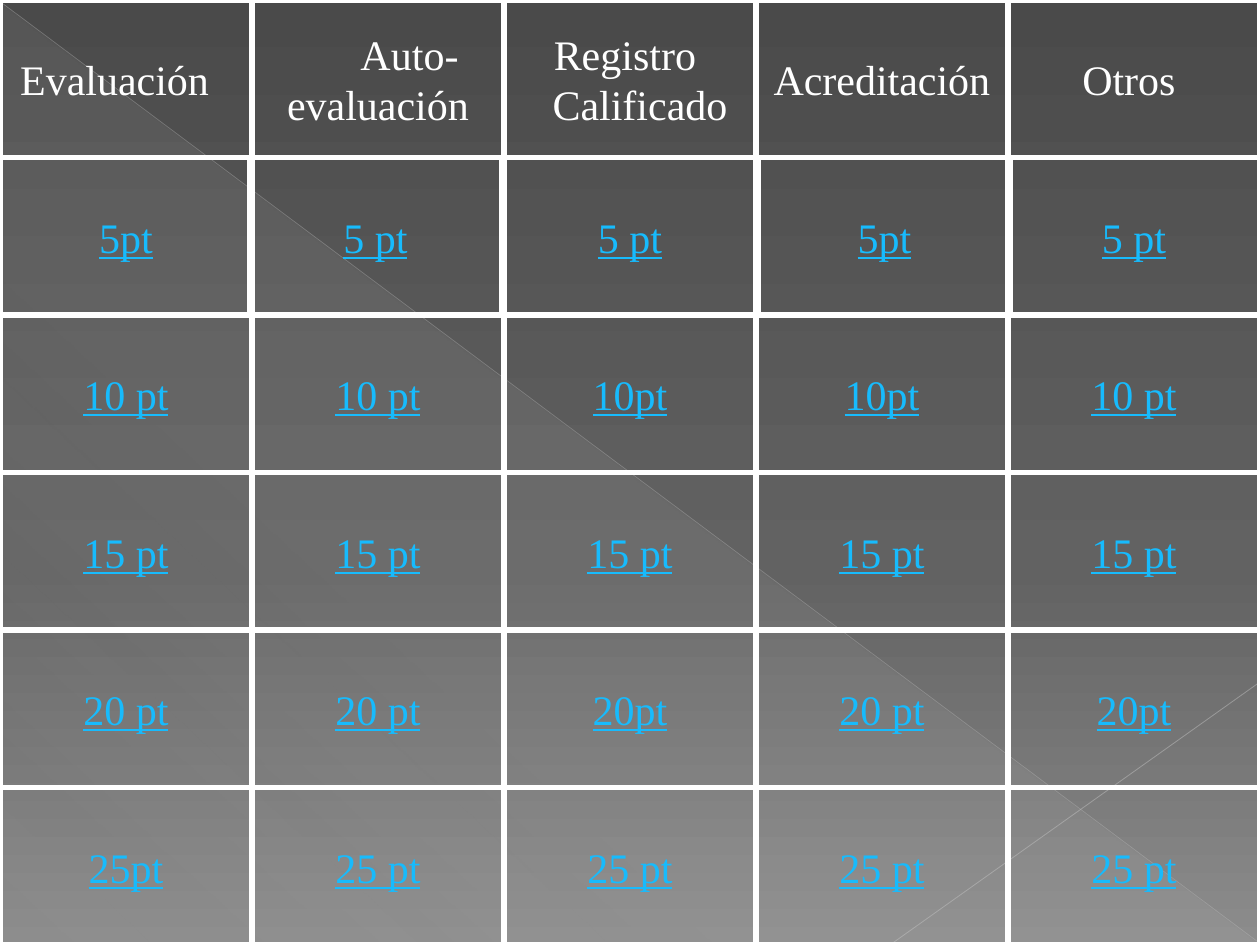
from dataclasses import dataclass

from lxml.etree import SubElement
from pptx import Presentation
from pptx.dml.color import RGBColor
from pptx.enum.shapes import MSO_CONNECTOR, MSO_SHAPE
from pptx.enum.text import MSO_ANCHOR, PP_ALIGN
from pptx.oxml.ns import qn
from pptx.util import Inches, Pt


@dataclass(frozen=True)
class Theme:
    font: str = "Times New Roman"
    size: float = 24
    heading: str = "FFFFFF"
    link: str = "17BBFD"
    border: str = "FFFFFF"
    border_width: float = 3
    backdrop: tuple = ((0, "4A4A4A", 100), (60, "626262", 100), (100, "8C8C8C", 100))
    sheen: tuple = ((0, "D2D2D2", 10), (70, "D2D2D2", 8), (100, "D2D2D2", 1))
    long_ray: tuple = ("BFBFBF", 0.39, 35)
    short_ray: tuple = ("C6C6C6", 0.47, 45)


HEADINGS = [
    [("Evaluación", -0.09)],
    [("Auto-", 0.25), ("evaluación", 0)],
    [("Registro", -0.04), ("Calificado", 0.12)],
    [("Acreditación", 0)],
    [("Otros", -0.04)],
]
POINTS = [
    ["5pt", "5 pt", "5 pt", "5pt", "5 pt"],
    ["10 pt", "10 pt", "10pt", "10pt", "10 pt"],
    ["15 pt", "15 pt", "15 pt", "15 pt", "15 pt"],
    ["20 pt", "20 pt", "20pt", "20 pt", "20pt"],
    ["25pt", "25 pt", "25 pt", "25 pt", "25 pt"],
]
NUDGES = {(1, 1): -0.01, (3, 1): 0.01}


class Board:
    def __init__(self, presentation, theme, columns, rows):
        self.theme = theme
        self.slide = presentation.slides.add_slide(presentation.slide_layouts[6])
        self.column_width = presentation.slide_width / columns
        self.row_height = presentation.slide_height / rows

    def place(self, column, row):
        return round(column * self.column_width), round(row * self.row_height)

    def gradient(self, fill, owner, stops, angle):
        fill.gradient()
        gradient = owner.find(".//" + qn("a:gradFill"))
        for child in list(gradient):
            gradient.remove(child)
        stop_list = SubElement(gradient, qn("a:gsLst"))
        for position, color, opacity in stops:
            stop = SubElement(stop_list, qn("a:gs"), pos=str(position * 1000))
            tint = SubElement(stop, qn("a:srgbClr"), val=color)
            if opacity < 100:
                SubElement(tint, qn("a:alpha"), val=str(opacity * 1000))
        SubElement(gradient, qn("a:lin"), ang=str(angle * 60000), scaled="0")

    def backdrop(self):
        self.gradient(self.slide.background.fill, self.slide.element, self.theme.backdrop, 90)

    def shape(self, kind, column, row, width=1, height=1):
        shape = self.slide.shapes.add_shape(
            kind, *self.place(column, row), *self.place(width, height)
        )
        shape.shadow.inherit = False
        return shape

    def sheen(self, *area):
        shape = self.shape(MSO_SHAPE.RIGHT_TRIANGLE, *area)
        self.gradient(shape.fill, shape.element, self.theme.sheen, 133)
        shape.line.fill.background()

    def ray(self, start, end, style):
        color, width, opacity = style
        connector = self.slide.shapes.add_connector(
            MSO_CONNECTOR.STRAIGHT, *self.place(*start), *self.place(*end)
        )
        connector.line.color.rgb = RGBColor.from_string(color)
        connector.line.width = Pt(width)
        properties = connector.element.spPr
        tint = properties.find(".//" + qn("a:srgbClr"))
        SubElement(tint, qn("a:alpha"), val=str(opacity * 1000))
        SubElement(properties, qn("a:effectLst"))

    def cell(self, kind, column, row, wrap):
        shape = self.shape(kind, column, row)
        shape.fill.background()
        shape.line.color.rgb = RGBColor.from_string(self.theme.border)
        shape.line.width = Pt(self.theme.border_width)
        frame = shape.text_frame
        frame.word_wrap = wrap
        frame.vertical_anchor = MSO_ANCHOR.MIDDLE
        frame.margin_left = frame.margin_right = 0
        return frame

    def add_label(self, paragraph, text, color, underline=False):
        paragraph.alignment = PP_ALIGN.CENTER
        run = paragraph.add_run()
        run.text = text
        run.font.name = self.theme.font
        run.font.size = Pt(self.theme.size)
        run.font.color.rgb = RGBColor.from_string(color)
        run.font.underline = underline

    def button(self, column, row, label):
        frame = self.cell(MSO_SHAPE.ACTION_BUTTON_CUSTOM, column, row, False)
        self.add_label(frame.paragraphs[0], label, self.theme.link, True)

    def heading(self, column, lines):
        frame = self.cell(MSO_SHAPE.RECTANGLE, column, 0, True)
        for index, (text, shift) in enumerate(lines):
            paragraph = frame.add_paragraph() if index else frame.paragraphs[0]
            self.add_label(paragraph, text, self.theme.heading)
            if shift:
                side = "marL" if shift > 0 else "marR"
                properties = paragraph._p.get_or_add_pPr()
                properties.set(side, str(Inches(2 * abs(shift))))


def main():
    presentation = Presentation()
    presentation.slide_width, presentation.slide_height = Inches(10), Inches(7.5)
    theme = Theme()
    columns, rows = len(HEADINGS), len(POINTS) + 1
    board = Board(presentation, theme, columns, rows)
    board.backdrop()
    board.sheen(0, 0.01, columns, rows - 0.01)
    board.ray((0, 0.01), (columns, rows - 0.01), theme.long_ray)
    board.ray((columns, 4.33), (3.54, rows - 0.01), theme.short_ray)
    for row, labels in enumerate(POINTS, start=1):
        for column, label in enumerate(labels):
            board.button(column + NUDGES.get((column, row), 0), row, label)
    for column, lines in enumerate(HEADINGS):
        board.heading(column, lines)
    presentation.save("out.pptx")


if __name__ == "__main__":
    main()
